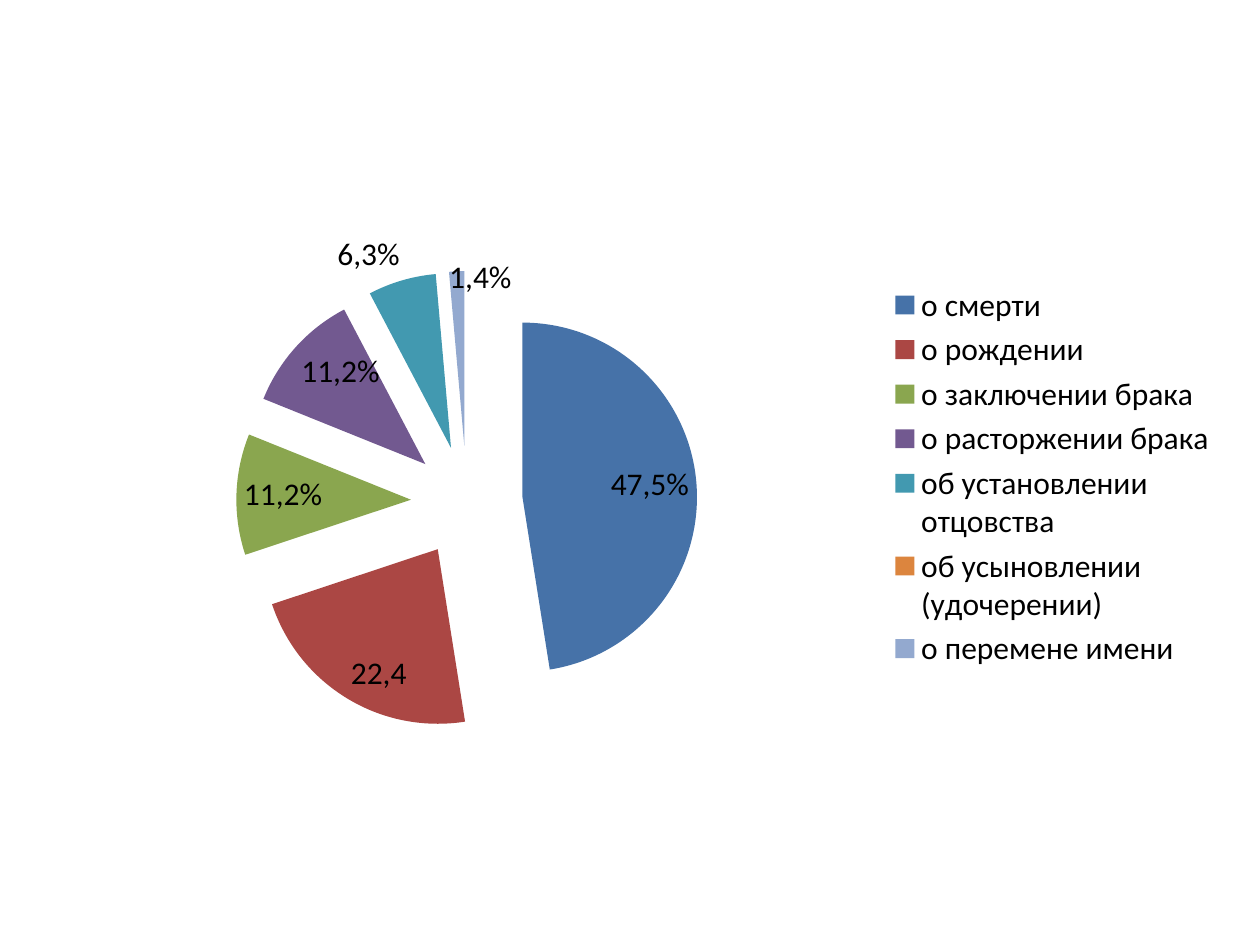
import pptx
import pptx.chart.data
import pptx.dml.color
import pptx.enum.chart
import pptx.oxml
import pptx.oxml.ns
import pptx.util
from lxml import etree

RGBColor = pptx.dml.color.RGBColor
Cm = pptx.util.Cm
Position = pptx.enum.chart.XL_LABEL_POSITION
qn = pptx.oxml.ns.qn

BLACK = RGBColor(0x00, 0x00, 0x00)
BLUE = RGBColor(0x46, 0x72, 0xA8)
RED = RGBColor(0xAB, 0x47, 0x44)
GREEN = RGBColor(0x8A, 0xA6, 0x4F)
PURPLE = RGBColor(0x72, 0x59, 0x90)
TEAL = RGBColor(0x42, 0x99, 0xB0)
ORANGE = RGBColor(0xDC, 0x85, 0x3E)
PALE_BLUE = RGBColor(0x93, 0xA9, 0xCF)

EXPLOSION = 32
RECORDS = [
    ("о смерти", 0.475, "47,5%", BLUE, Position.INSIDE_END),
    ("о рождении", 0.224, "22,4", RED, Position.INSIDE_END),
    ("о заключении брака", 0.112, "11,2%", GREEN, Position.INSIDE_END),
    ("о расторжении брака", 0.112, "11,2%", PURPLE, Position.INSIDE_END),
    ("об установлении отцовства", 0.063, "6,3%", TEAL, Position.OUTSIDE_END),
    ("об усыновлении (удочерении)", 0, "", ORANGE, Position.OUTSIDE_END),
    ("о перемене имени", 0.014, "1,4%", PALE_BLUE, Position.OUTSIDE_END),
]


def set_layout(parent, index, **settings):
    """Give a chart part a manual layout, in fractions of the chart."""
    for previous in parent.findall(qn("c:layout")):
        parent.remove(previous)
    layout = pptx.oxml.parse_xml(
        f'<c:layout {pptx.oxml.ns.nsdecls("c")}><c:manualLayout/></c:layout>'
    )
    for name, value in settings.items():
        etree.SubElement(layout[0], qn(f"c:{name}"), val=str(value))
    parent.insert(index, layout)


def hide_label(label):
    """Mark the label element of one slice as deleted."""
    for child in list(label)[1:]:
        label.remove(child)
    etree.SubElement(label, qn("c:delete"), val="1")


def format_slices(chart):
    """Colour, label and pull out the slices."""
    series = chart.plots[0].series[0]
    series.data_labels.show_value = True
    series.data_labels.number_format = "Основной"
    series.data_labels.number_format_is_linked = False
    for index, (_, _, text, colour, position) in enumerate(RECORDS):
        point = series.points[index]
        point.format.fill.solid()
        point.format.fill.fore_color.rgb = colour
        label = point.data_label
        label.position = position
        if text:
            label.text_frame.text = text
            font = label.text_frame.paragraphs[0].font
            font.size, font.name = pptx.util.Pt(18), "Calibri"
            font.color.rgb = BLACK
    explosion = etree.Element(qn("c:explosion"), val=str(EXPLOSION))
    next(chart.element.iter(qn("c:dPt"))).addprevious(explosion)
    labels = list(chart.element.iter(qn("c:dLbl")))
    for label, record in zip(labels, RECORDS):
        if not record[2]:
            hide_label(label)
    set_layout(labels[-1], 1, x=0.02, y=0.04)


def add_records_chart(slide, left, top, width, height):
    """Place the exploded pie of civil records with its legend in the box."""
    data = pptx.chart.data.CategoryChartData(number_format="General")
    data.categories = [record[0] for record in RECORDS]
    data.add_series("Series 1", [record[1] for record in RECORDS])
    chart = slide.shapes.add_chart(
        pptx.enum.chart.XL_CHART_TYPE.PIE, left, top, width, height, data
    ).chart
    chart.has_title = False
    chart.font.size, chart.font.name = pptx.util.Pt(18), "Calibri"
    chart.font.color.rgb = BLACK
    chart.plots[0].vary_by_categories = True
    chart.has_legend = True
    chart.legend.position = pptx.enum.chart.XL_LEGEND_POSITION.RIGHT
    chart.legend.include_in_layout = False
    format_slices(chart)

    plot_area = next(chart.element.iter(qn("c:plotArea")))
    set_layout(plot_area, 0, layoutTarget="inner", xMode="edge", yMode="edge",
               x=0.06, y=0.25, w=0.61, h=0.56)
    legend = next(chart.element.iter(qn("c:legend")))
    set_layout(legend, 1, xMode="edge", yMode="edge",
               x=0.71, y=0.26, w=0.28, h=0.48)


def main():
    """Build and save the presentation."""
    presentation = pptx.Presentation()
    presentation.slide_width, presentation.slide_height = Cm(25.4), Cm(19.05)
    slide = presentation.slides.add_slide(presentation.slide_layouts[6])
    add_records_chart(slide, Cm(0.53), Cm(1.32), Cm(24.33), Cm(16.59))
    presentation.save("out.pptx")


if __name__ == "__main__":
    main()
